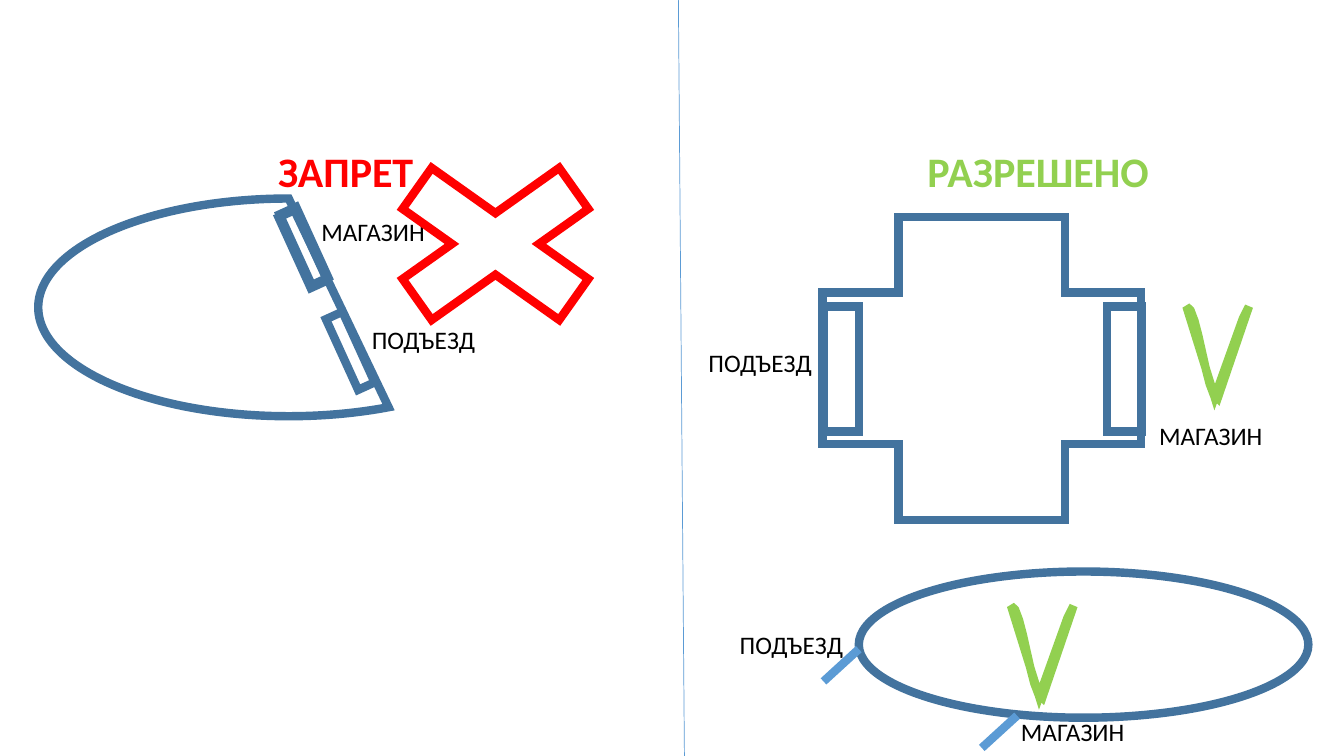
from lxml import etree
from pptx import Presentation
from pptx.dml.color import RGBColor
from pptx.enum.shapes import MSO_CONNECTOR, MSO_SHAPE
from pptx.enum.text import MSO_AUTO_SIZE, PP_ALIGN
from pptx.oxml.ns import qn
from pptx.util import Inches, Pt

STRAIGHT = MSO_CONNECTOR.STRAIGHT
CROSS_MARK = MSO_SHAPE.MATH_MULTIPLY
CHORD = MSO_SHAPE.CHORD
PLUS = MSO_SHAPE.CROSS
OVAL = MSO_SHAPE.FLOWCHART_CONNECTOR
PROCESS = MSO_SHAPE.FLOWCHART_PROCESS
GROW = MSO_AUTO_SIZE.SHAPE_TO_FIT_TEXT
LEFT, CENTER = PP_ALIGN.LEFT, PP_ALIGN.CENTER

COLUMNS, ROWS = 133.33, 75
CELL = Inches(0.1)
ENTRANCE, SHOP = "ПОДЪЕЗД", "МАГАЗИН"


def color(value):
    return RGBColor.from_string(value)


def cells(*counts):
    return [round(count * CELL) for count in counts]


def bezier(points, steps=8):
    """Return points along a cubic curve, without its start."""
    curve = []
    for step in range(1, steps + 1):
        t = step / steps
        weights = ((1 - t) ** 3, 3 * t * (1 - t) ** 2, 3 * t * t * (1 - t), t ** 3)
        curve.append(tuple(sum(w * point[axis] for w, point in zip(weights, points))
                           for axis in (0, 1)))
    return curve


class Sketch:
    font = "Calibri"
    black, white = "000000", "FFFFFF"
    red, green = "FF0000", "92D050"
    wall, road = "43739E", "5B9BD5"
    thick, thin = 6, 0.5

    def __init__(self, slide):
        self.slide = slide

    def outline(self, shape, line_color, width):
        shape.line.color.rgb = color(line_color)
        shape.line.width = Pt(width)
        line = shape.line._get_or_add_ln()
        etree.SubElement(line, qn("a:miter"), lim="800000")

    def finish(self, shape, line_color, fill):
        shape.shadow.inherit = False
        if fill:
            shape.fill.solid()
            shape.fill.fore_color.rgb = color(fill)
        else:
            shape.fill.background()
        self.outline(shape, line_color, self.thick)

    def shape(self, kind, box, line_color=wall, fill=None, rotation=0):
        shape = self.slide.shapes.add_shape(kind, *cells(*box))
        shape.rotation = rotation
        self.finish(shape, line_color, fill)

    def text(self, words, box, size=18, text_color=black, bold=False, align=LEFT):
        frame = self.slide.shapes.add_textbox(*cells(*box)).text_frame
        frame.word_wrap = True
        frame.auto_size = GROW
        paragraph = frame.paragraphs[0]
        paragraph.text = words
        paragraph.alignment = align
        paragraph.font.name = self.font
        paragraph.font.size = Pt(size)
        paragraph.font.bold = bold
        paragraph.font.color.rgb = color(text_color)

    def title(self, words, left, text_color):
        self.text(words, (left, 13.9, 38.4, 6.1), 30, text_color, True, CENTER)

    def label(self, words, left, top):
        self.text(words, (left, top, 13, 7.1))

    def line(self, start, end, width=thick):
        connector = self.slide.shapes.add_connector(STRAIGHT, *cells(*start, *end))
        self.outline(connector, self.road, width)
        etree.SubElement(connector._element.spPr, qn("a:effectLst"))

    def check_mark(self, left, top):
        stroke = bezier([(0, 0), (1.1, 0), (2, 9.1), (3.1, 9.1)])
        points = stroke + [(6.2, 0), (5.6, 1.2), (2.8, 9)]
        builder = self.slide.shapes.build_freeform(*cells(left, top), scale=1.0)
        builder.add_line_segments([cells(left + x, top + y) for x, y in points])
        self.finish(builder.convert_to_shape(), self.green, self.white)


def draw_forbidden(sketch):
    sketch.title("ЗАПРЕТ", 15.1, sketch.red)
    sketch.label(ENTRANCE, 35.9, 31.7)
    sketch.label(SHOP, 30.9, 21)
    sketch.shape(CROSS_MARK, (34.2, 13.6, 29.9, 21.2), sketch.red)
    sketch.shape(CHORD, (3.8, 19.7, 49.7, 21.6), fill=sketch.white)
    for left, top in ((26.2, 23.8), (30.9, 33.9), (26.3, 23.5)):
        sketch.shape(PROCESS, (left, top, 7.7, 1.8), rotation=65.5)


def draw_allowed(sketch):
    sketch.title("РАЗРЕШЕНО", 83.8, sketch.green)
    sketch.label(ENTRANCE, 69.3, 34)
    sketch.label(SHOP, 114, 41.2)
    sketch.check_mark(117.7, 30.4)
    sketch.shape(PLUS, (81.6, 21.5, 31.6, 30.1), fill=sketch.white)
    sketch.shape(OVAL, (85.2, 56.7, 44.6, 14.5), fill=sketch.white)
    for left in (109.8, 81.7):
        sketch.shape(PROCESS, (left, 30.4, 3.5, 12.4))
    for left, top in ((81.7, 67.6), (97.4, 74.2)):
        sketch.line((left, top), (left + 3.5, top - 3.2))
    sketch.label(ENTRANCE, 72.4, 61.9)
    sketch.label(SHOP, 100.3, 70.6)
    sketch.check_mark(100.3, 60.1)


def main():
    presentation = Presentation()
    presentation.slide_width, presentation.slide_height = cells(COLUMNS, ROWS)
    slide = presentation.slides.add_slide(presentation.slide_layouts[6])
    sketch = Sketch(slide)
    draw_forbidden(sketch)
    sketch.line((67.3, 0), (67.9, ROWS), sketch.thin)
    draw_allowed(sketch)
    presentation.save("out.pptx")


if __name__ == "__main__":
    main()
